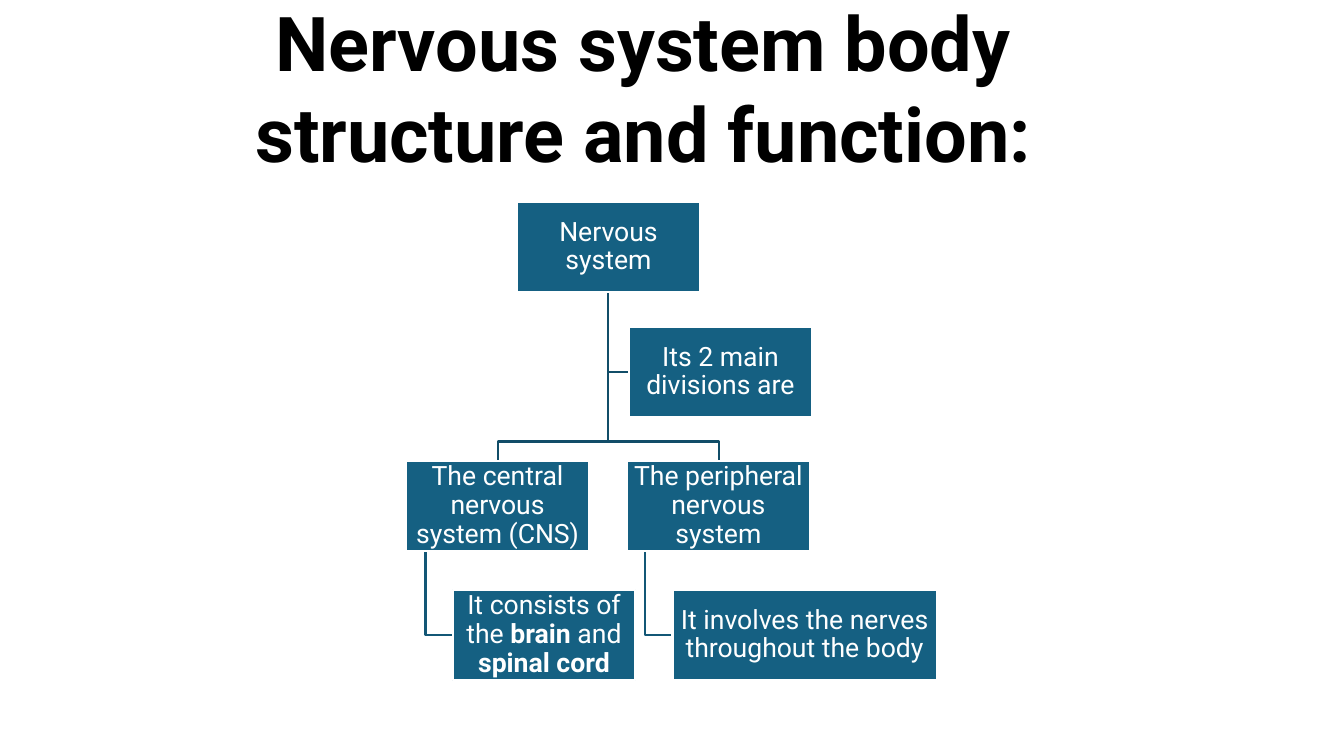
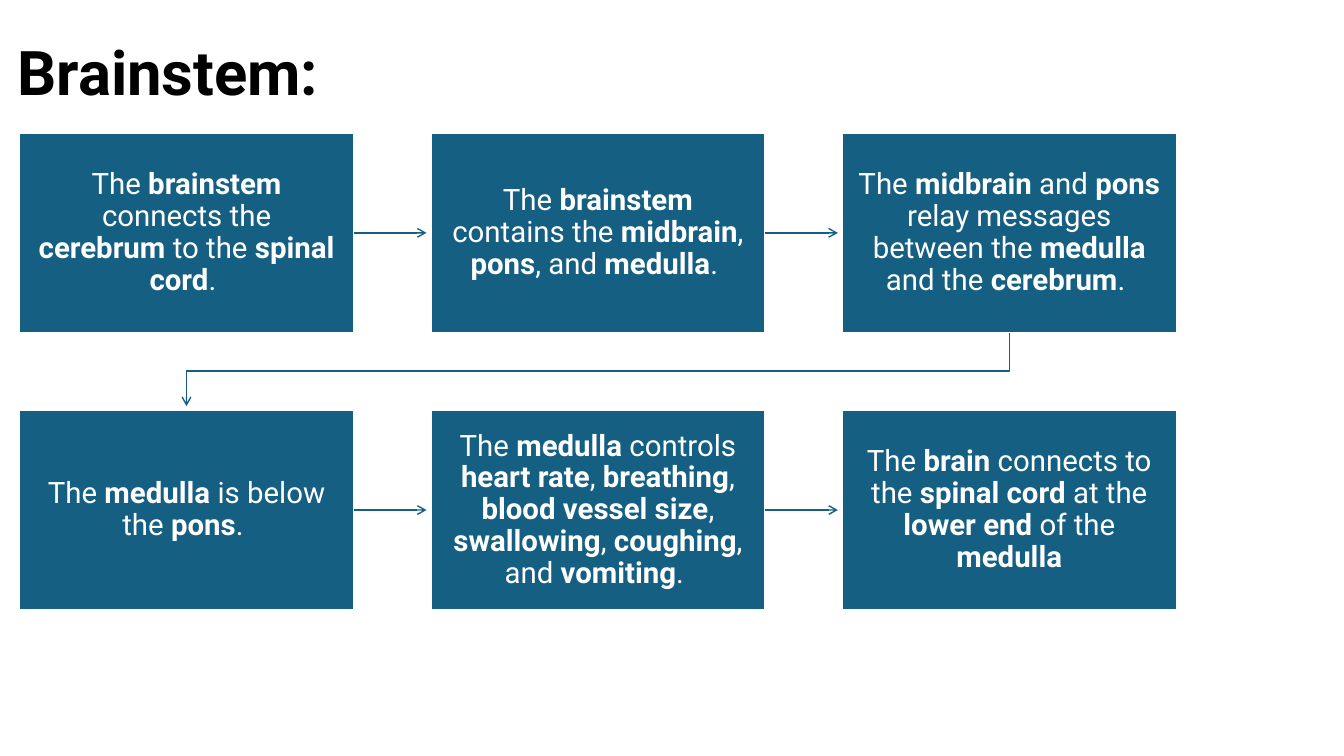
"""Build two slides on the nervous system: a division chart and a brainstem flow."""
import lxml.etree
import pptx
import pptx.dml.color
import pptx.enum.shapes
import pptx.enum.text
import pptx.oxml.ns
import pptx.util

PX = 9144
FONT = "Roboto"
BLUE, WHITE, BLACK = "156082", "FFFFFF", "000000"
UPPER_LINE, LOWER_LINE = "114D68", "135776"
ALIGN = pptx.enum.text.PP_ALIGN
ANCHOR = pptx.enum.text.MSO_ANCHOR
color = pptx.dml.color.RGBColor.from_string
qn = pptx.oxml.ns.qn


def add_box(slide, text, bounds, size, margins):
    """Add a blue box; words between asterisks are bold."""
    box = slide.shapes.add_shape(
        pptx.enum.shapes.MSO_SHAPE.RECTANGLE, *[value * PX for value in bounds])
    box.shadow.inherit = False
    box.fill.solid()
    box.fill.fore_color.rgb = color(BLUE)
    box.line.color.rgb = color(WHITE)
    box.line.width = pptx.util.Pt(1.5)
    frame = box.text_frame
    frame.word_wrap = True
    frame.vertical_anchor = ANCHOR.MIDDLE
    frame.margin_left = frame.margin_right = margins[0] * PX
    frame.margin_top = frame.margin_bottom = margins[1] * PX
    paragraph = frame.paragraphs[0]
    paragraph.alignment = ALIGN.CENTER
    paragraph.line_spacing = 0.9
    for index, part in enumerate(text.split("*")):
        if part:
            run = paragraph.add_run()
            run.text = part
            run.font.name = FONT
            run.font.size = pptx.util.Pt(size)
            run.font.bold = index % 2 == 1
            run.font.color.rgb = color(WHITE)
    return box


def add_line(slide, points, line_color, width, arrow=False):
    """Add a straight connector, or an open outline where the line bends."""
    if len(points) == 2:
        line = slide.shapes.add_connector(
            pptx.enum.shapes.MSO_CONNECTOR.STRAIGHT,
            *[value * PX for point in points for value in point])
    else:
        builder = slide.shapes.build_freeform(*points[0], scale=PX)
        builder.add_line_segments(points[1:], close=False)
        line = builder.convert_to_shape()
        line.fill.background()
    line.line.color.rgb = color(line_color)
    line.line.width = pptx.util.Pt(width)
    if arrow:
        lxml.etree.SubElement(line.get_or_add_ln(), qn("a:tailEnd"), type="arrow")
    lxml.etree.SubElement(line.element.spPr, qn("a:effectLst"))
    return line


presentation = pptx.Presentation()
presentation.slide_width = 1333 * PX
presentation.slide_height = 750 * PX

titles = [
    ("Nervous system body structure and function:",
     (209, -9, 858, 192), 54, ALIGN.CENTER, ANCHOR.TOP, 1.0),
    ("Brainstem:", (7, 2, 1150, 145), 44, ALIGN.LEFT, ANCHOR.MIDDLE, 0.9),
]
slides = []
for text, bounds, size, alignment, anchor, spacing in titles:
    slide = presentation.slides.add_slide(presentation.slide_layouts[5])
    slides.append(slide)
    title = slide.shapes.title
    title.left, title.top, title.width, title.height = [value * PX for value in bounds]
    title.text_frame.text = text
    title.text_frame.word_wrap = True
    title.text_frame.auto_size = pptx.enum.text.MSO_AUTO_SIZE.NONE
    title.text_frame.vertical_anchor = anchor
    paragraph = title.text_frame.paragraphs[0]
    paragraph.alignment = alignment
    paragraph.line_spacing = spacing
    font = paragraph.runs[0].font
    font.name = FONT
    font.size = pptx.util.Pt(size)
    font.bold = True
    font.color.rgb = color(BLACK)

division_slide, brainstem_slide = slides

add_line(division_slide, [(603, 290), (603, 369), (624, 369)], UPPER_LINE, 1.5)
for branch_x in (494, 713):
    add_line(division_slide,
             [(603, 290), (603, 438), (branch_x, 438), (branch_x, 457)],
             UPPER_LINE, 1.5)
for stem_x in (422, 640):
    add_line(division_slide, [(stem_x, 547), (stem_x, 630), (stem_x + 27, 630)],
             LOWER_LINE, 1.5)

divisions = [
    ("Nervous system", 513, 200, 181),
    ("Its 2 main divisions are", 624, 324, 181),
    ("The central nervous system (CNS)", 403, 457, 181),
    ("The peripheral nervous system", 622, 457, 181),
    ("It consists of the *brain* and *spinal cord*", 449, 585, 181),
    ("It involves the nerves throughout the body", 667, 585, 262),
]
for text, left, top, width in divisions:
    add_box(division_slide, text, (left, top, width, 90), 19, (1, 1))

facts = [
    "The *brainstem* connects the *cerebrum* to the *spinal cord*. ",
    "The *brainstem* contains the *midbrain*, *pons*, and *medulla*. ",
    "The *midbrain* and *pons* relay messages between the *medulla* and the *cerebrum*. ",
    "The *medulla* is below the *pons*. ",
    "The *medulla* controls *heart rate*, *breathing*, *blood vessel size*, "
    "*swallowing*, *coughing*, and *vomiting*. ",
    "The *brain* connects to the *spinal cord* at the *lower end* of the *medulla*",
]
columns = 3
fact_width, fact_height = 332, 198
column_step, row_step = 408, 275
first_left, first_top = 19, 132
arrow_gap = 4
for index, text in enumerate(facts):
    row, column = divmod(index, columns)
    left = first_left + column * column_step
    top = first_top + row * row_step
    box = add_box(brainstem_slide, text, (left, top, fact_width, fact_height), 21, (16, 17))
    if column < columns - 1:
        middle = top + fact_height // 2
        arrow = add_line(
            brainstem_slide,
            [(left + fact_width, middle), (left + column_step - arrow_gap, middle)],
            BLUE, 1, arrow=True)
        arrow.begin_connect(box, 3)

first_center = first_left + fact_width // 2
last_center = first_center + (columns - 1) * column_step
first_bottom = first_top + fact_height
second_top = first_top + row_step
turn = (first_bottom + second_top) // 2
add_line(brainstem_slide,
         [(last_center, first_bottom), (last_center, turn),
          (first_center, turn), (first_center, second_top - arrow_gap)],
         BLUE, 1, arrow=True)

presentation.save("out.pptx")
